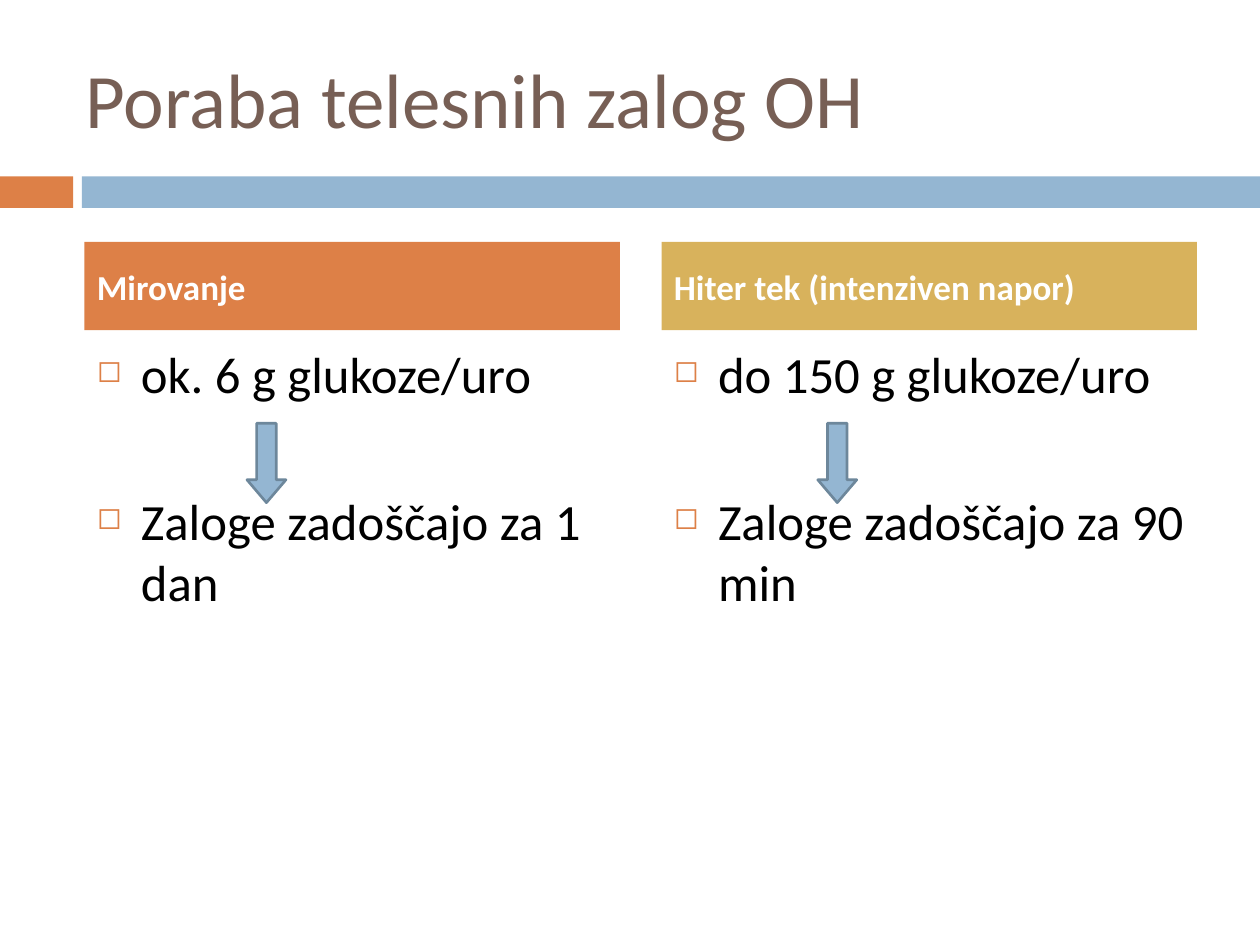
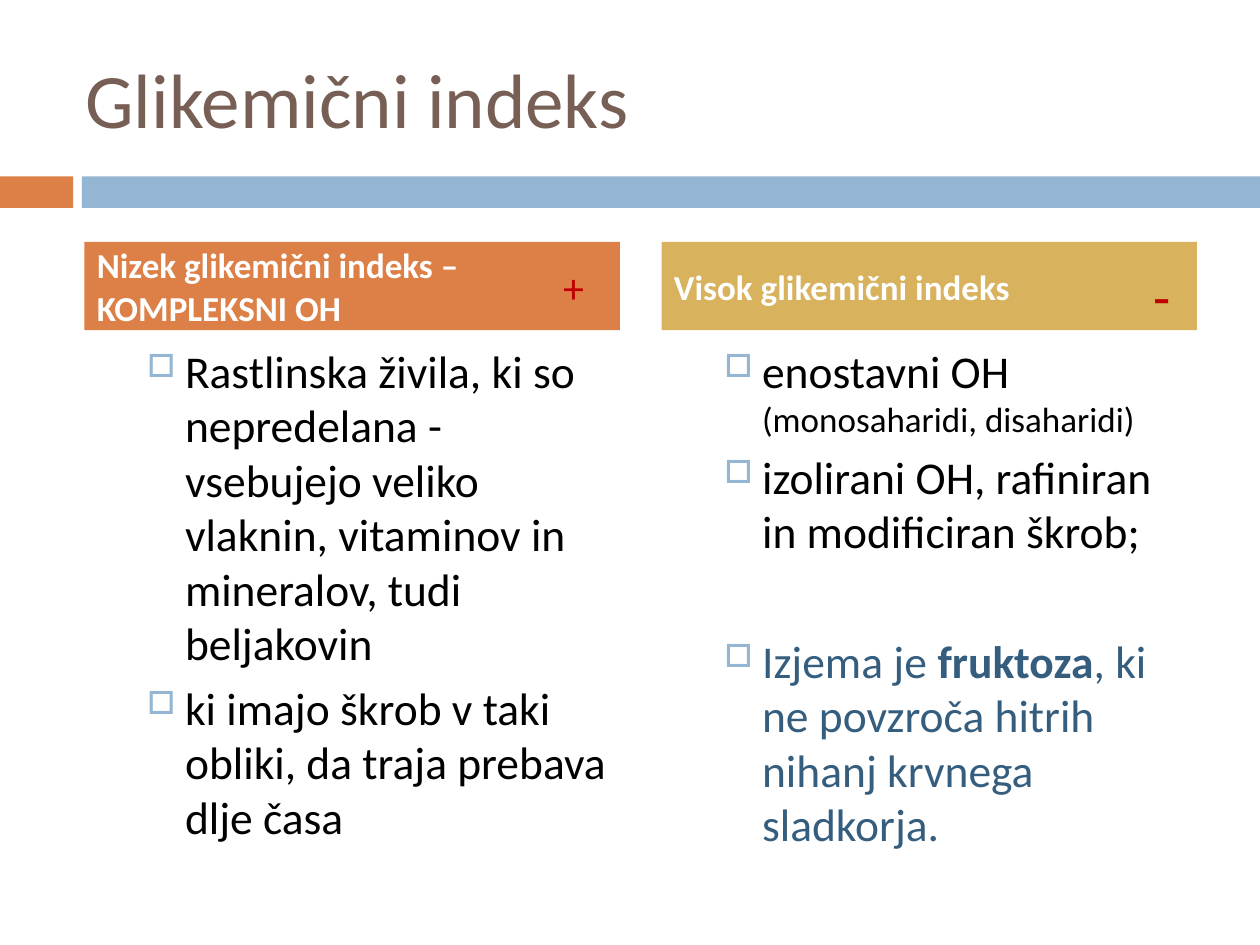
from dataclasses import dataclass

from lxml import etree
from pptx import Presentation
from pptx.dml.color import RGBColor
from pptx.enum import shapes, text
from pptx.oxml import ns
from pptx.util import Inches, Pt

FONT = "Calibri"
BROWN = RGBColor(0x77, 0x5F, 0x55)
ORANGE = RGBColor(0xDD, 0x80, 0x47)
BLUE = RGBColor(0x94, 0xB6, 0xD2)
SLATE = RGBColor(0x6D, 0x87, 0x9B)
NAVY = RGBColor(0x35, 0x5D, 0x7E)
GOLD = RGBColor(0xD8, 0xB2, 0x5C)
RED = RGBColor(0xC0, 0x00, 0x00)
BLACK = RGBColor(0, 0, 0)
WHITE = RGBColor(0xFF, 0xFF, 0xFF)

COLUMNS = ((0.67, ORANGE), (5.25, GOLD))
COLUMN_WIDTH = 4.25
HEADER_TOP, HEADER_HEIGHT = 1.92, 0.7
BODY_TOP, BODY_HEIGHT = 2.67, 3.92


@dataclass
class ListStyle:
    """Look of one bullet level."""
    mark: str
    mark_color: RGBColor
    mark_percent: int
    size: int
    margin: float
    hanging: float
    space: float
    wide_space: float


MAIN_LIST = ListStyle("◻", ORANGE, 60, 29, 0.35, 0.35, 7, 49.4)
SUB_LIST = ListStyle("□", BLUE, 70, 26, 0.7, 0.3, 5.5, 42.7)


@dataclass
class Item:
    """One bullet: its spans as (text, changes), and whether a wide gap precedes it."""
    spans: list
    color: RGBColor = BLACK
    wide: bool = False


def style_span(span, size, color, bold=False):
    """Set the font of one run."""
    span.font.name = FONT
    span.font.size = Pt(size)
    span.font.color.rgb = color
    span.font.bold = bold


def add_block(page, left, top, width, height, fill, kind=shapes.MSO_SHAPE.RECTANGLE):
    """Add a flat filled shape without an outline."""
    block = page.shapes.add_shape(
        kind, Inches(left), Inches(top), Inches(width), Inches(height))
    block.shadow.inherit = False
    block.fill.solid()
    block.fill.fore_color.rgb = fill
    block.line.fill.background()
    return block


def add_box(page, left, top, width, height):
    """Add an empty wrapping text box."""
    box = page.shapes.add_textbox(
        Inches(left), Inches(top), Inches(width), Inches(height))
    box.text_frame.word_wrap = True
    return box


def write_line(box, words, size, color, bold=False):
    """Fill a box with one left-aligned paragraph."""
    box.text_frame.text = words
    para = box.text_frame.paragraphs[0]
    para.alignment = text.PP_ALIGN.LEFT
    style_span(para.runs[0], size, color, bold)
    return para


def add_bullet(para, style):
    """Give a paragraph its hanging bullet."""
    props = para._p.get_or_add_pPr()
    props.set("marL", str(Inches(style.margin)))
    props.set("indent", str(-Inches(style.hanging)))
    color = etree.SubElement(props, ns.qn("a:buClr"))
    etree.SubElement(color, ns.qn("a:srgbClr")).set("val", str(style.mark_color))
    etree.SubElement(props, ns.qn("a:buSzPct")).set("val", str(style.mark_percent * 1000))
    etree.SubElement(props, ns.qn("a:buChar")).set("char", style.mark)


def add_header(page, left, fill, words):
    """Add the coloured heading of a column."""
    header = add_block(page, left, HEADER_TOP, COLUMN_WIDTH, HEADER_HEIGHT, fill)
    header.text_frame.word_wrap = True
    header.text_frame.vertical_anchor = text.MSO_ANCHOR.MIDDLE
    write_line(header, words, 20, WHITE, True).space_before = Pt(7)


def add_list(page, left, items, style):
    """Add the bullet list of a column."""
    frame = add_box(page, left, BODY_TOP, COLUMN_WIDTH, BODY_HEIGHT).text_frame
    for index, item in enumerate(items):
        para = frame.add_paragraph() if index else frame.paragraphs[0]
        para.space_before = Pt(style.wide_space if item.wide else style.space)
        add_bullet(para, style)
        for words, changes in item.spans:
            span = para.add_run()
            span.text = words
            style_span(span, **{"size": style.size, "color": item.color, **changes})


def add_down_arrow(page, left, offset):
    """Add the arrow between the two bullets of a column."""
    arrow = add_block(page, left + offset, 3.36, 0.31, 0.63, BLUE,
                      shapes.MSO_SHAPE.DOWN_ARROW)
    arrow.adjustments[0] = 0.5
    arrow.adjustments[1] = 0.587
    arrow.line.color.rgb = SLATE
    arrow.line.width = Pt(1.5)


def add_page(deck, title, headings, lists, style):
    """Add a slide with title, band and two headed lists."""
    page = deck.slides.add_slide(deck.slide_layouts[6])
    add_block(page, 0, 1.4, 0.58, 0.25, ORANGE)
    add_block(page, 0.65, 1.4, 9.35, 0.25, BLUE)
    title_box = add_box(page, 0.58, 0.3, 8.92, 0.95)
    title_box.text_frame.vertical_anchor = text.MSO_ANCHOR.MIDDLE
    write_line(title_box, title, 44, BROWN)
    for (left, fill), heading, items in zip(COLUMNS, headings, lists):
        add_list(page, left, items, style)
        add_header(page, left, fill, heading)
    return page


def build_reserves(deck):
    """Build the slide on carbohydrate reserves."""
    cases = (("ok. 6 g glukoze/uro", "1 dan"), ("do 150 g glukoze/uro", "90 min"))
    lists = [[Item([(rate, {})]),
              Item([(f"Zaloge zadoščajo za {duration}", {})], wide=True)]
             for rate, duration in cases]
    page = add_page(deck, "Poraba telesnih zalog OH",
                    ("Mirovanje", "Hiter tek (intenziven napor)"), lists, MAIN_LIST)
    for (left, _), offset in zip(COLUMNS, (1.29, 1.24)):
        add_down_arrow(page, left, offset)


def build_index(deck):
    """Build the slide on the glycaemic index."""
    low = [
        Item([("Rastlinska živila, ki so nepredelana - vsebujejo veliko vlaknin, "
               "vitaminov in mineralov, tudi beljakovin", {})]),
        Item([("ki imajo škrob v taki obliki, da traja prebava dlje časa", {})]),
    ]
    high = [
        Item([("enostavni OH ", {}), ("(monosaharidi, disaharidi)", {"size": 20})]),
        Item([("izolirani OH, rafiniran in modificiran škrob;", {})]),
        Item([("Izjema je ", {}), ("fruktoza", {"bold": True}),
              (", ki ne povzroča hitrih nihanj krvnega sladkorja.", {})],
             color=NAVY, wide=True),
    ]
    page = add_page(deck, "Glikemični indeks",
                    ("Nizek glikemični indeks – KOMPLEKSNI OH", "Visok glikemični indeks"),
                    (low, high), SUB_LIST)
    write_line(add_box(page, 4.37, 2.03, 0.39, 0.5), "+", 24, RED)
    write_line(add_box(page, 9.06, 2.03, 0.31, 0.64), "-", 32, RED)


def main():
    """Build and save the deck."""
    deck = Presentation()
    deck.slide_width, deck.slide_height = Inches(10), Inches(7.5)
    build_reserves(deck)
    build_index(deck)
    deck.save("out.pptx")


if __name__ == "__main__":
    main()
